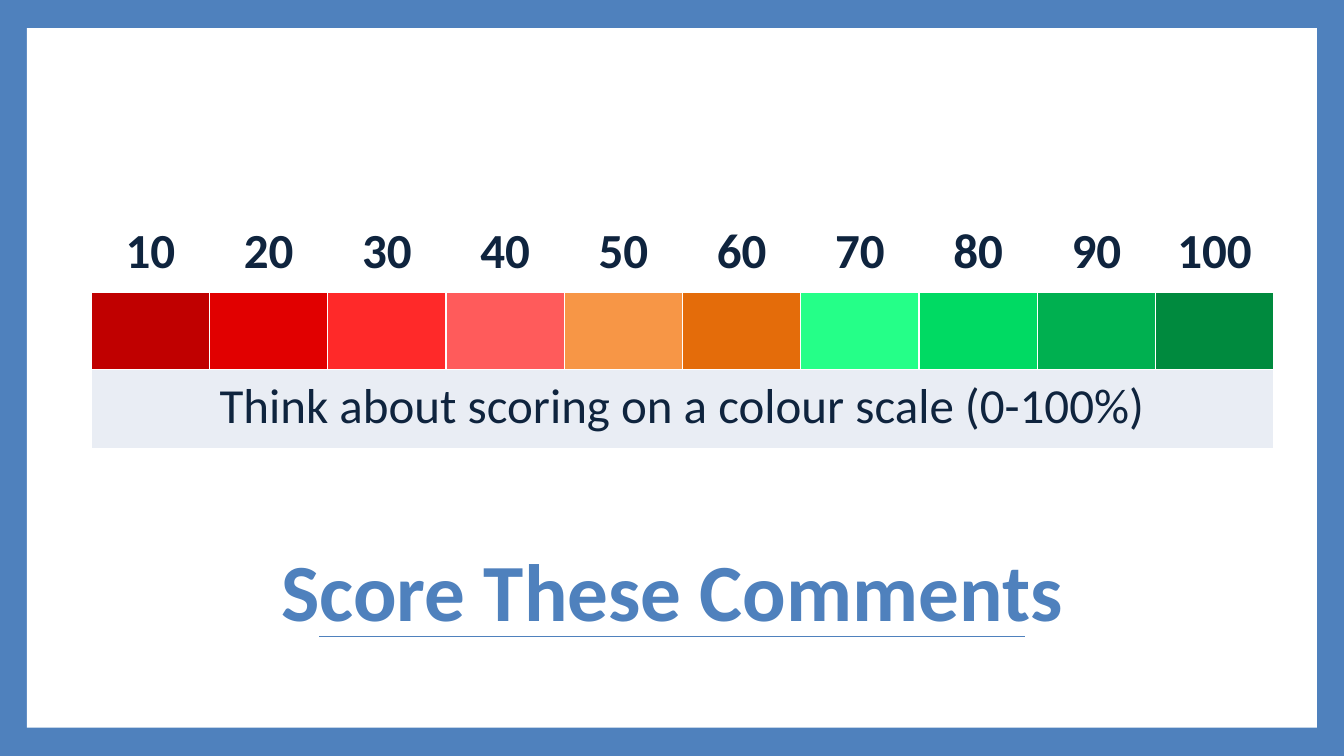
from lxml import etree
from pptx import Presentation
from pptx.dml.color import RGBColor
from pptx.enum.shapes import MSO_CONNECTOR, MSO_SHAPE
from pptx.enum.text import MSO_ANCHOR, PP_ALIGN
from pptx.oxml.ns import qn
from pptx.util import Cm, Pt

RECTANGLE = MSO_SHAPE.RECTANGLE
STRAIGHT = MSO_CONNECTOR.STRAIGHT
BOTTOM = MSO_ANCHOR.BOTTOM
CENTER = PP_ALIGN.CENTER

FONT = "Calibri"
BLUE, NAVY, WHITE, PALE = "4F81BD", "0F243E", "FFFFFF", "E9EDF4"
SCALE_COLORS = ["C00000", "E10000", "FF2929", "FF5B5B", "F79646",
                "E46C0A", "25FF88", "00DA63", "00B050", "008A3E"]
PAGE_WIDTH, PAGE_HEIGHT = 33.87, 19.05


def color(hex_string):
    return RGBColor.from_string(hex_string)


def write_centered(frame, text, size, hex_string, bold):
    para = frame.paragraphs[0]
    para.text = text
    para.alignment = CENTER
    para.font.name = FONT
    para.font.size = Pt(size)
    para.font.bold = bold
    para.font.color.rgb = color(hex_string)
    return para


def add_panel(page, box, hex_string):
    left, top, width, height = map(Cm, box)
    panel = page.shapes.add_shape(RECTANGLE, left, top, width, height)
    panel.shadow.inherit = False
    panel.fill.solid()
    panel.fill.fore_color.rgb = color(hex_string)
    panel.line.fill.background()


def add_frame(page, box):
    """Blue page border around a white panel."""
    left, top, width, height = box
    side, edge = 0.68, 0.71
    add_panel(page, box, BLUE)
    add_panel(page, (left + side, top + edge, width - 2 * side, height - 2 * edge), WHITE)


def add_title(page, box):
    """Title resting on a thin centred rule."""
    left, top, width, height = box

    # Rule
    rule_width = 17.78
    rule_left = left + (width - rule_width) / 2
    rule_top = top + height - 0.2
    rule = page.shapes.add_connector(STRAIGHT, Cm(rule_left), Cm(rule_top),
                                     Cm(rule_left + rule_width), Cm(rule_top))
    rule.line.color.rgb = color(BLUE)
    rule.line.width = Pt(0.75)
    etree.SubElement(rule.element.spPr, qn("a:effectLst"))

    # Text
    title = page.shapes.add_textbox(Cm(left), Cm(top), Cm(width), Cm(height))
    frame = title.text_frame
    frame.word_wrap = True
    frame.vertical_anchor = BOTTOM
    para = write_centered(frame, "Score These Comments", 58, BLUE, True)
    para.line_spacing = 0.9
    para.space_after = Pt(6)


def set_borders(cell, bottom_width):
    """White borders, placed ahead of the cell's fill as the schema asks."""
    properties = cell._tc.get_or_add_tcPr()
    widths = {"a:lnL": 1, "a:lnR": 1, "a:lnT": 1, "a:lnB": bottom_width}
    for index, (tag, width) in enumerate(widths.items()):
        border = etree.Element(qn(tag), w=str(Pt(width)))
        fill = etree.SubElement(border, qn("a:solidFill"))
        etree.SubElement(fill, qn("a:srgbClr"), val=WHITE)
        properties.insert(index, border)


def style_cell(cell, hex_string=None, bottom_width=1):
    if hex_string:
        cell.fill.solid()
        cell.fill.fore_color.rgb = color(hex_string)
    else:
        cell.fill.background()
    set_borders(cell, bottom_width)


def set_margins(cell, side, edge):
    cell.margin_left = cell.margin_right = Cm(side)
    cell.margin_top = cell.margin_bottom = Cm(edge)


def add_scale(page, box):
    """Scores, their colours and a caption across the full width."""
    left, top, width, height = map(Cm, box)
    columns = len(SCALE_COLORS)
    table = page.shapes.add_table(3, columns, left, top, width, height).table
    table.first_row = table.horz_banding = False

    # Scores and colours
    for index, hex_string in enumerate(SCALE_COLORS):
        score = table.cell(0, index)
        style_cell(score, bottom_width=3)
        set_margins(score, 0.48, 0.25)
        write_centered(score.text_frame, str(10 * (index + 1)), 35, NAVY, True)
        style_cell(table.cell(1, index), hex_string)

    # Caption
    caption = table.cell(2, 0)
    caption.merge(table.cell(2, columns - 1))
    style_cell(caption, PALE)
    set_margins(caption, 0.33, 0.18)
    write_centered(caption.text_frame, "Think about scoring on a colour scale (0-100%)",
                   35, NAVY, False)


def main():
    deck = Presentation()
    deck.slide_width, deck.slide_height = Cm(PAGE_WIDTH), Cm(PAGE_HEIGHT)
    page = deck.slides.add_slide(deck.slide_layouts[6])
    add_frame(page, (0, 0, PAGE_WIDTH, PAGE_HEIGHT))
    add_title(page, (3.09, 11.89, 27.69, 4.34))
    add_scale(page, (2.3, 5.35, 29.8, 5.94))
    deck.save("out.pptx")


if __name__ == "__main__":
    main()
